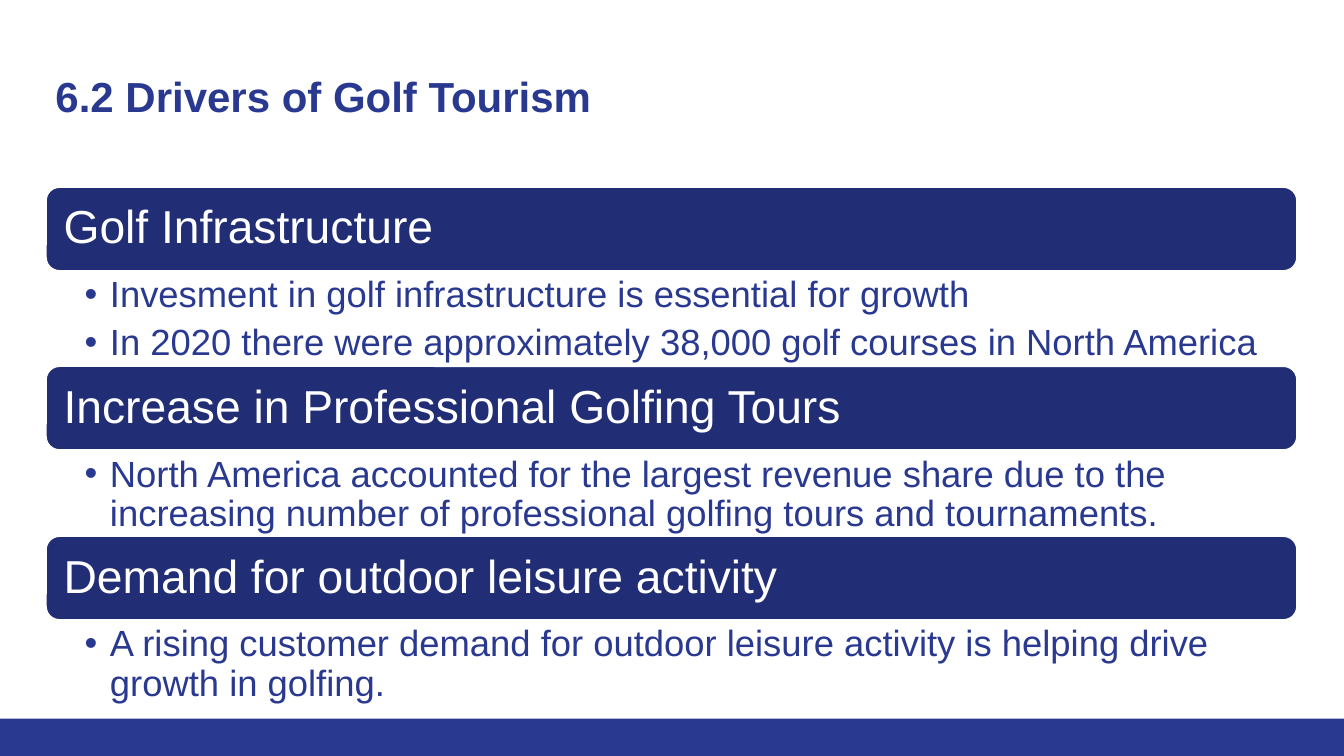
"""Build the slide on the drivers of golf tourism."""
import pptx
import pptx.dml.color
import pptx.enum.shapes
import pptx.enum.text
import pptx.oxml.ns
import pptx.util
from lxml import etree

COLOURS = {"blue": "2A3990", "navy": "212D74", "white": "FFFFFF"}
SHAPES = pptx.enum.shapes.MSO_SHAPE
ANCHOR = pptx.enum.text.MSO_ANCHOR
LEFT, WIDTH = 3.38, 93.17
BAR_HEIGHT = 11.24
DRIVERS = [
    ("Golf Infrastructure", 12.45, [
        "Invesment in golf infrastructure is essential for growth",
        "In 2020 there were approximately 38,000 golf courses in North America",
    ]),
    ("Increase in Professional Golfing Tours", 11.24, [
        "North America accounted for the largest revenue share due to the "
        "increasing number of professional golfing tours and tournaments.",
    ]),
    ("Demand for outdoor leisure activity", 11.24, [
        "A rising customer demand for outdoor leisure activity is helping "
        "drive growth in golfing.",
    ]),
]


def colour(name):
    return pptx.dml.color.RGBColor.from_string(COLOURS[name])


def apply(target, values):
    for name, value in values.items():
        setattr(target, name, value)


class SlideBuilder:
    def __init__(self, deck, layout):
        self.deck = deck
        self.page = deck.slides.add_slide(layout)
        self.font = "Arial"

    def area(self, left, top, width, height):
        across, down = self.deck.slide_width / 100, self.deck.slide_height / 100
        return {"left": round(left * across), "top": round(top * down),
                "width": round(width * across), "height": round(height * down)}

    def set_text(self, box, lines, size, ink, insets, anchor, bold=False, **spacing):
        frame = box.text_frame
        sides = ("margin_left", "margin_top", "margin_right", "margin_bottom")
        apply(frame, {"word_wrap": True, "vertical_anchor": anchor,
                      "auto_size": pptx.enum.text.MSO_AUTO_SIZE.NONE})
        apply(frame, dict(zip(sides, map(pptx.util.Inches, insets))))
        frame.text = "\n".join(lines)
        for para in frame.paragraphs:
            apply(para, {"alignment": pptx.enum.text.PP_ALIGN.LEFT,
                         "space_before": pptx.util.Pt(0), **spacing})
            for span in para.runs:
                apply(span.font, {"name": self.font, "bold": bold,
                                  "size": pptx.util.Pt(size)})
                span.font.color.rgb = colour(ink)

    def title(self, text, area):
        box = self.page.shapes.title
        apply(box, self.area(*area))
        self.set_text(box, [text], 30, "blue", [0.1] * 4, ANCHOR.TOP, bold=True)

    def panel(self, kind, area, fill):
        box = self.page.shapes.add_shape(kind, *self.area(*area).values())
        box.shadow.inherit = False
        box.fill.solid()
        box.fill.fore_color.rgb = colour(fill)
        box.line.fill.background()
        return box

    def heading(self, text, area):
        box = self.panel(SHAPES.ROUNDED_RECTANGLE, area, "navy")
        box.line.color.rgb = colour("white")
        box.line.width = pptx.util.Pt(2)
        self.set_text(box, [text], 33, "white", [0.14] * 4, ANCHOR.MIDDLE,
                      line_spacing=0.9)

    def bullets(self, box, lines, area):
        apply(box, self.area(*area))
        self.set_text(box, lines, 26, "blue", [0.39, 0.05, 0.26, 0.05], ANCHOR.TOP,
                      line_spacing=0.9, space_after=pptx.util.Pt(6))
        indent = pptx.util.Inches(0.25)
        for para in box.text_frame.paragraphs:
            properties = para._p.get_or_add_pPr()
            properties.set("marL", str(indent))
            properties.set("indent", str(-indent))
            for tag, key, value in (("a:buFont", "typeface", self.font),
                                    ("a:buChar", "char", "•")):
                etree.SubElement(properties, pptx.oxml.ns.qn(tag)).set(key, value)


def main():
    deck = pptx.Presentation()
    apply(deck, {"slide_width": pptx.util.Inches(13.33),
                 "slide_height": pptx.util.Inches(7.5)})
    builder = SlideBuilder(deck, deck.slide_layouts.get_by_name("Comparison"))
    builder.panel(SHAPES.RECTANGLE, (0, 95.07, 100, 4.93), "blue")
    builder.title("6.2 Drivers of Golf Tourism", (LEFT, 8, WIDTH, 11.87))
    bodies = list(builder.page.placeholders)[1:]
    top = 24.67
    for body, (name, list_height, points) in zip(bodies, DRIVERS):
        builder.heading(name, (LEFT, top, WIDTH, BAR_HEIGHT))
        top += BAR_HEIGHT
        builder.bullets(body, points, (LEFT, top, WIDTH, list_height))
        top += list_height
    for spare in bodies[len(DRIVERS):]:
        spare.element.getparent().remove(spare.element)
    deck.save("out.pptx")


if __name__ == "__main__":
    main()
